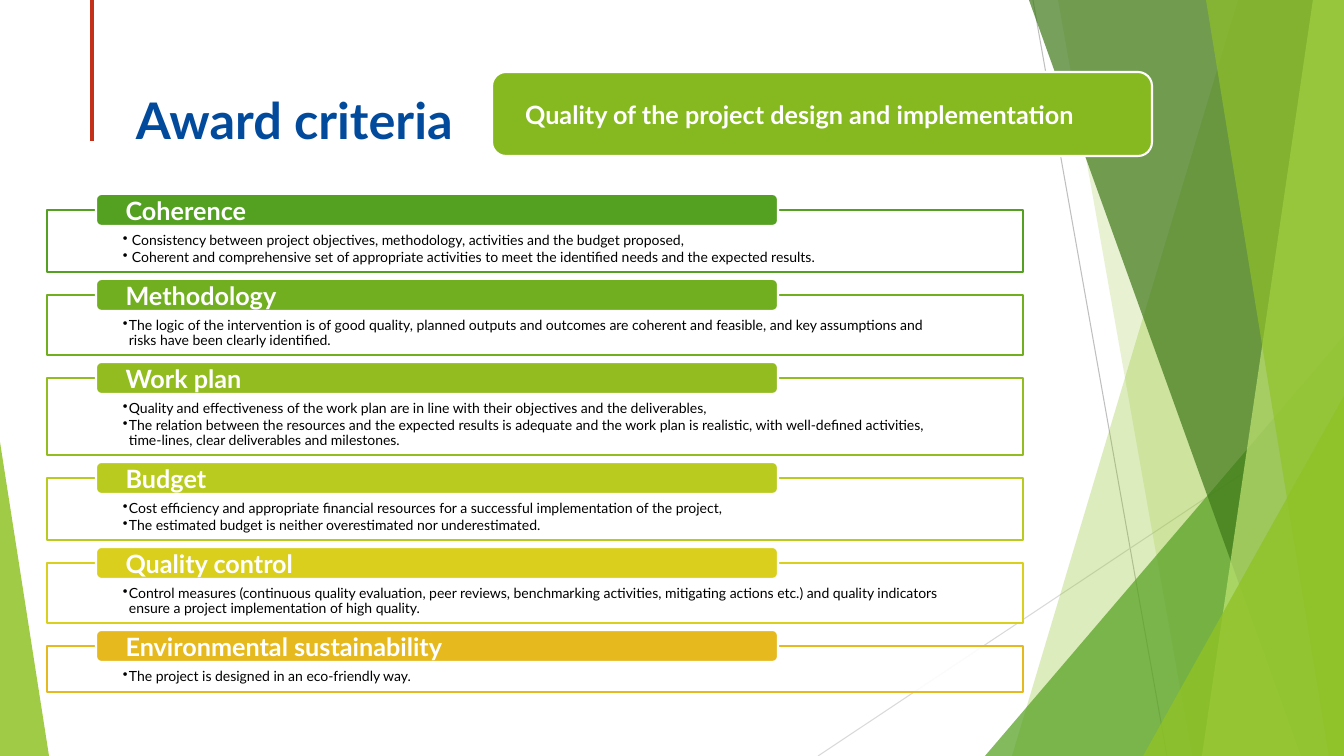
"""Build the award criteria slide with its green facet backdrop."""
from lxml import etree
from pptx import Presentation
from pptx import util as u
from pptx.dml.color import RGBColor
from pptx.enum import shapes, text
from pptx.oxml.ns import qn

WIDTH, HEIGHT = 1344, 756
SCALE = 12192000 / WIDTH
FONT = "Lato"
TITLE = "Award criteria"
BADGE = "Quality of the project design and implementation"

# heading, colour, body height, bullet indent, bullets
CRITERIA = [
    ("Coherence", "54A021", 62, 9, [
        "Consistency between project objectives, methodology, activities and the budget proposed,",
        "Coherent and comprehensive set of appropriate activities to meet the identified needs "
        "and the expected results."]),
    ("Methodology", "71AE20", 60, 6, [
        "The logic of the intervention is of good quality, planned outputs and outcomes are coherent "
        "and feasible, and key assumptions and risks have been clearly identified."]),
    ("Work plan", "92BC1F", 77, 6, [
        "Quality and effectiveness of the work plan are in line with their objectives and the deliverables,",
        "The relation between the resources and the expected results is adequate and the work plan is "
        "realistic, with well-defined activities, time-lines, clear deliverables and milestones."]),
    ("Budget", "B9CB1E", 62, 6, [
        "Cost efficiency and appropriate financial resources for a successful implementation of the project,",
        "The estimated budget is neither overestimated nor underestimated."]),
    ("Quality control", "DACF1C", 60, 6, [
        "Control measures (continuous quality evaluation, peer reviews, benchmarking activities, mitigating "
        "actions etc.) and quality indicators ensure a project implementation of high quality."]),
    ("Environmental sustainability", "E6B91E", 46, 6, [
        "The project is designed in an eco-friendly way."]),
]
BODY_LEFT, BODY_TOP, BODY_WIDTH, BODY_GAP = 47, 210, 976, 23
HEAD_LEFT, HEAD_WIDTH, HEAD_HEIGHT = 96, 682, 32

RULES = [
    ((1033, 0, 1167, HEIGHT), "BFBFBF", 0.75),
    ((WIDTH, 406, 818, HEIGHT), "D9D9D9", 0.75),
    ((92, 0, 92, 141), "C42F1A", 2.25),
]
# bands: top x, bottom x; wedges: left, top, width, apex
FACETS = [
    ("band", (1238, 1012), "90C226", 30),
    ("band", (1058, 1192), "90C226", 20),
    ("wedge", (985, 336, 359, 1), "54A021", 72),
    ("band", (1029, 1301), "3F7819", 70),
    ("band", (1313, 1202), "C0E474", 70),
    ("band", (1206, 1329), "90C226", 65),
    ("wedge", (1143, 396, 201, 1), "90C226", 80),
    ("wedge", (0, 442, 49, 0), "90C226", 85),
]


def px(*lengths):
    return [u.Emu(round(length * SCALE)) for length in lengths]


def rgb(code):
    return RGBColor.from_string(code)


def paint(shape, colour, opacity=100, edge=None):
    shape.shadow.inherit = False
    shape.fill.solid()
    shape.fill.fore_color.rgb = rgb(colour)
    if opacity < 100:
        tint = shape.fill._xPr.find(".//" + qn("a:srgbClr"))
        etree.SubElement(tint, qn("a:alpha"), val=str(opacity * 1000))
    if edge:
        shape.line.color.rgb = rgb(edge)
        shape.line.width = u.Pt(1.5)
    else:
        shape.line.fill.background()


def write(frame, lines, size, colour, insets, anchor, bold=False, indent=0):
    frame.word_wrap = True
    frame.vertical_anchor = anchor
    frame.margin_left, frame.margin_top, frame.margin_right, frame.margin_bottom = px(*insets)
    for i, line in enumerate(lines):
        para = frame.paragraphs[0] if i == 0 else frame.add_paragraph()
        para.text = line
        para.alignment = text.PP_ALIGN.LEFT
        if indent:
            hang = px(indent)[0]
            props = para._p.get_or_add_pPr()
            props.set("marL", str(hang))
            props.set("indent", str(-hang))
            para.line_spacing, para.space_after = 0.9, u.Pt(1.5)
            etree.SubElement(props, qn("a:buChar"), char="•")
        para.font.name, para.font.size, para.font.bold = FONT, u.Pt(size), bold
        para.font.color.rgb = rgb(colour)


def add_rule(slide, ends, colour, weight):
    rule = slide.shapes.add_connector(shapes.MSO_CONNECTOR.STRAIGHT, *px(*ends))
    rule.line.color.rgb = rgb(colour)
    rule.line.width = u.Pt(weight)
    etree.SubElement(rule._element.spPr, qn("a:effectLst"))


def add_facet(slide, kind, place, colour, opacity):
    if kind == "band":
        top, bottom = place
        outline = slide.shapes.build_freeform(top, 0, SCALE)
        outline.add_line_segments([(WIDTH, 0), (WIDTH, HEIGHT), (bottom, HEIGHT)], close=True)
        facet = outline.convert_to_shape()
    else:
        left, top, width, apex = place
        facet = slide.shapes.add_shape(
            shapes.MSO_SHAPE.ISOSCELES_TRIANGLE, *px(left, top, width, HEIGHT - top))
        facet.adjustments[0] = apex
    paint(facet, colour, opacity)


def add_heading(slide, box, colour, label, inset):
    heading = slide.shapes.add_shape(shapes.MSO_SHAPE.ROUNDED_RECTANGLE, *px(*box))
    paint(heading, colour, edge="FFFFFF")
    write(heading.text_frame, [label], 18, "FFFFFF", (inset, 0, inset, 0),
          text.MSO_ANCHOR.MIDDLE, bold=True)


def main():
    deck = Presentation()
    deck.slide_width, deck.slide_height = px(WIDTH, HEIGHT)
    slide = deck.slides.add_slide(deck.slide_layouts[5])
    for rule in RULES:
        add_rule(slide, *rule)
    for facet in FACETS:
        add_facet(slide, *facet)

    title = slide.shapes.title
    title.left, title.top, title.width, title.height = px(126, 84, 948, 145)
    write(title.text_frame, [TITLE], 36, "024B9C", (10, 5, 10, 5), text.MSO_ANCHOR.TOP, bold=True)

    top = BODY_TOP
    for label, colour, height, indent, bullets in CRITERIA:
        body = slide.shapes.add_shape(
            shapes.MSO_SHAPE.RECTANGLE, *px(BODY_LEFT, top, BODY_WIDTH, height))
        paint(body, "FFFFFF", 90, colour)
        write(body.text_frame, bullets, 10, "000000", (76, 23, 76, 8),
              text.MSO_ANCHOR.TOP, indent=indent)
        add_heading(slide, (HEAD_LEFT, top - HEAD_HEIGHT / 2, HEAD_WIDTH, HEAD_HEIGHT),
                    colour, label, 28)
        top += height + BODY_GAP

    add_heading(slide, (492, 72, 660, 84), "86B820", BADGE, 29)
    deck.save("out.pptx")


if __name__ == "__main__":
    main()
